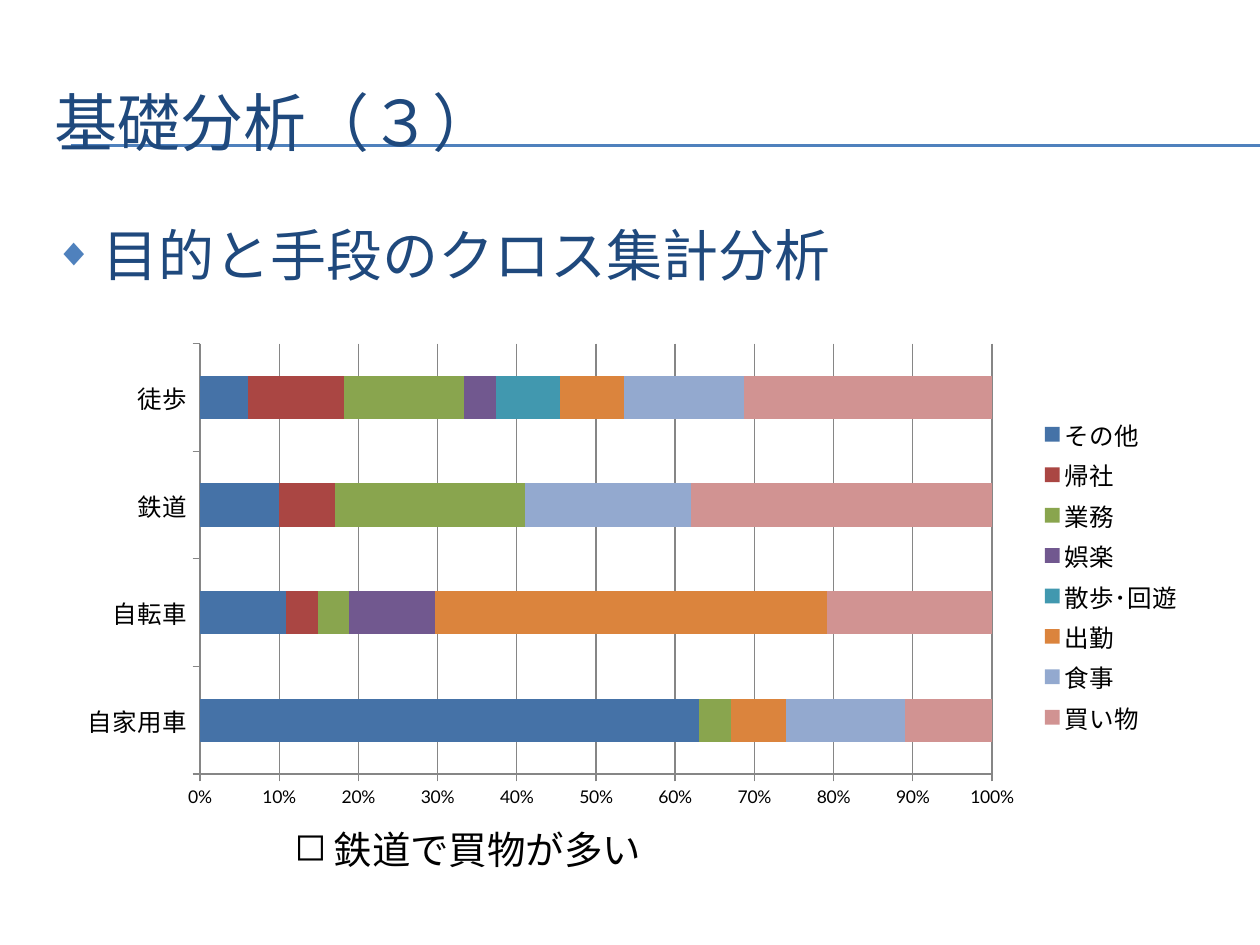
from lxml import etree
from pptx import Presentation
from pptx.chart.data import CategoryChartData
from pptx.dml.color import RGBColor
from pptx.enum import chart as ch, shapes, text
from pptx.oxml import parse_xml
from pptx.oxml.ns import nsdecls, qn
from pptx.util import Inches, Pt

FONT = "Lato"
NAVY, BLUE, BLACK, GRID = "1F497D", "4F81BD", "000000", "868686"
CATEGORIES = ["自家用車", "自転車", "鉄道", "徒歩"]
SERIES = [
    ("その他", [63, 11, 10, 6], "4572A7"),
    ("帰社", [None, 4, 7, 12], "AA4643"),
    ("業務", [4, 4, 24, 15], "89A54E"),
    ("娯楽", [None, 11, None, 4], "71588F"),
    ("散歩･回遊", [None, None, None, 8], "4198AF"),
    ("出勤", [7, 50, None, 8], "DB843D"),
    ("食事", [15, None, 21, 15], "93A9CF"),
    ("買い物", [11, 21, 38, 31], "D19392"),
]


def rgb(value):
    return RGBColor.from_string(value)


def style(font, size, color):
    font.name, font.size = FONT, Pt(size)
    font.color.rgb = rgb(color)


def place(sp, box):
    sp.left, sp.top, sp.width, sp.height = (Inches(v) for v in box)


def add_text(p, words, size, color):
    r = p.add_run()
    r.text = words
    style(r.font, size, color)


def set_bullet(p, char, indent, color=None, percent=100):
    pPr = p._p.get_or_add_pPr()
    pPr.set("marL", str(Inches(indent)))
    pPr.set("indent", str(-Inches(indent)))
    if color:
        clr = etree.SubElement(pPr, qn("a:buClr"))
        etree.SubElement(clr, qn("a:srgbClr"), val=color)
    etree.SubElement(pPr, qn("a:buSzPct"), val=str(percent * 1000))
    etree.SubElement(pPr, qn("a:buChar"), char=char)


def add_rules(slide, left, right, tops):
    """Thin lines that run behind the title to the slide's edge."""
    for top in tops:
        line = slide.shapes.add_connector(
            shapes.MSO_CONNECTOR.STRAIGHT,
            Inches(left), Inches(top), Inches(right), Inches(top))
        line.line.color.rgb = rgb(BLUE)
        line.line.width = Pt(0.75)
        etree.SubElement(line._element.spPr, qn("a:effectLst"))
        slide.shapes._spTree.insert(2, line._element)


def fill_title(slide, box):
    title = slide.shapes.title
    place(title, box)
    tf = title.text_frame
    tf.auto_size = text.MSO_AUTO_SIZE.NONE
    tf.vertical_anchor = text.MSO_ANCHOR.MIDDLE
    p = tf.paragraphs[0]
    p.alignment = text.PP_ALIGN.LEFT
    add_text(p, "基礎分析（３）", 36, NAVY)


def fill_body(slide, box):
    body = slide.placeholders[1]
    place(body, box)
    tf = body.text_frame
    tf.auto_size = text.MSO_AUTO_SIZE.NONE
    p = tf.paragraphs[0]
    set_bullet(p, "◆", 0.38, BLUE, 70)
    add_text(p, "目的と手段のクロス集計分析", 32, NAVY)


def set_plot_layout(chart, x, y, w, h):
    """Fix the inner plot area, in fractions of the chart."""
    layout = parse_xml(
        f'<c:layout {nsdecls("c")}><c:manualLayout>'
        '<c:layoutTarget val="inner"/><c:xMode val="edge"/><c:yMode val="edge"/>'
        f'<c:x val="{x}"/><c:y val="{y}"/><c:w val="{w}"/><c:h val="{h}"/>'
        '</c:manualLayout></c:layout>')
    plot_area = chart._chartSpace.chart.plotArea
    for old in plot_area.findall(qn("c:layout")):
        plot_area.remove(old)
    plot_area.insert(0, layout)


def add_purpose_chart(slide, box):
    data = CategoryChartData()
    data.categories = CATEGORIES
    for name, values, _ in SERIES:
        data.add_series(name, values)
    chart = slide.shapes.add_chart(
        ch.XL_CHART_TYPE.BAR_STACKED_100, *(Inches(v) for v in box), data).chart
    style(chart.font, 10, BLACK)
    chart.has_title = False
    set_plot_layout(chart, 0.12, 0.02, 0.7, 0.89)

    plot = chart.plots[0]
    plot.vary_by_categories = False
    plot.gap_width, plot.overlap = 150, 100
    for series, (_, _, color) in zip(plot.series, SERIES):
        series.format.fill.solid()
        series.format.fill.fore_color.rgb = rgb(color)

    for axis in (chart.category_axis, chart.value_axis):
        axis.major_tick_mark = ch.XL_TICK_MARK.OUTSIDE
        axis.format.line.color.rgb = rgb(GRID)
    style(chart.category_axis.tick_labels.font, 14, BLACK)
    values = chart.value_axis
    values.maximum_scale, values.major_unit = 1, 0.1
    values.tick_labels.number_format = "0%"
    values.tick_labels.number_format_is_linked = False
    values.has_major_gridlines = True
    values.major_gridlines.format.line.color.rgb = rgb(GRID)

    chart.has_legend = True
    chart.legend.position = ch.XL_LEGEND_POSITION.RIGHT
    chart.legend.include_in_layout = False
    style(chart.legend.font, 14, BLACK)


def add_finding(slide, box):
    tf = slide.shapes.add_textbox(*(Inches(v) for v in box)).text_frame
    tf.word_wrap = False
    tf.auto_size = text.MSO_AUTO_SIZE.SHAPE_TO_FIT_TEXT
    p = tf.paragraphs[0]
    set_bullet(p, "◻", 0.31)
    add_text(p, "鉄道で買物が多い", 22, BLACK)


def main():
    prs = Presentation()
    prs.slide_width, prs.slide_height = Inches(10), Inches(7.5)
    slide = prs.slides.add_slide(prs.slide_layouts[1])
    add_rules(slide, 0.56, 10, (1.15, 1.16))
    fill_title(slide, (0.33, 0.5, 9.5, 0.92))
    fill_body(slide, (0.33, 1.7, 9.5, 0.87))
    add_purpose_chart(slide, (0.51, 2.65, 8.98, 3.84))
    add_finding(slide, (2.24, 6.51, 2.99, 0.47))
    prs.save("out.pptx")


if __name__ == "__main__":
    main()
